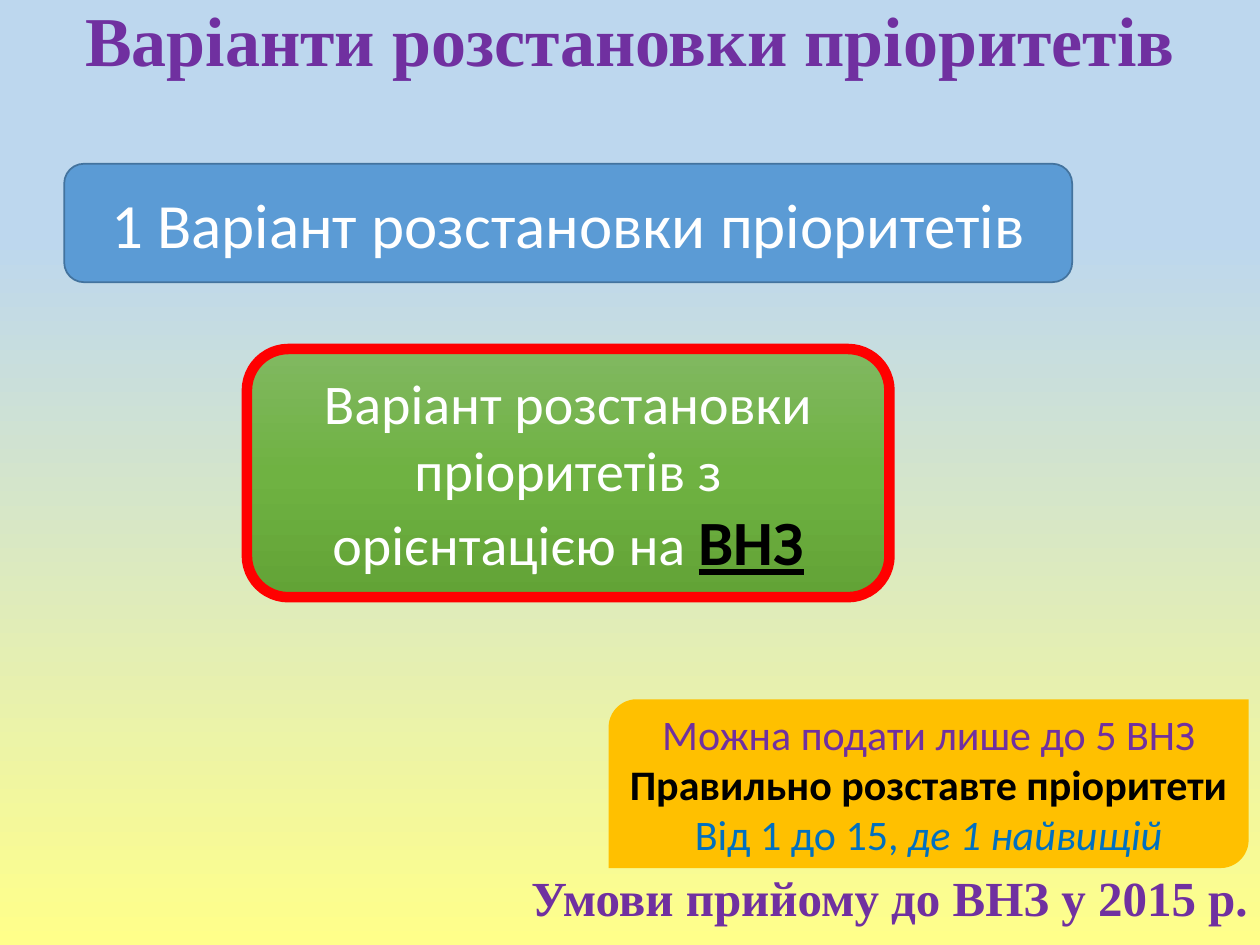
"""Build the slide about ways of setting admission priorities."""
from copy import deepcopy
from dataclasses import dataclass

from pptx import Presentation
from pptx.dml.color import RGBColor
from pptx.enum.shapes import MSO_SHAPE
from pptx.enum.text import MSO_ANCHOR, MSO_AUTO_SIZE, PP_ALIGN
from pptx.oxml.ns import qn
from pptx.util import Inches, Pt

CENTER, RIGHT = PP_ALIGN.CENTER, PP_ALIGN.RIGHT
MIDDLE = MSO_ANCHOR.MIDDLE
GROW = MSO_AUTO_SIZE.SHAPE_TO_FIT_TEXT
ROUNDED, DIAGONAL = MSO_SHAPE.ROUNDED_RECTANGLE, MSO_SHAPE.ROUND_2_DIAG_RECTANGLE


@dataclass(frozen=True)
class Theme:
    """Colours, fonts and type sizes."""
    purple: str = "7030A0"
    black: str = "000000"
    white: str = "FFFFFF"
    blue: str = "0070C0"
    red: str = "FF0000"
    amber: str = "FFC000"
    banner: str = "5B9BD5"
    banner_edge: str = "43739E"
    sky: tuple = ((0.25, "BDD7EE"), (1, "FFFF8A"))
    green: tuple = ((0, "81B861"), (0.5, "6FB242"), (1, "62A336"))
    body: str = "Calibri"
    heading: str = "Times New Roman"
    note: int = 24
    footer: int = 28
    option: int = 32
    large: int = 36
    title: int = 40


THEME = Theme()

CARDS = [
    dict(kind=DIAGONAL, at=(4.83, 5.55, 5.08, 1.34), fill=THEME.amber, line=None,
         size=THEME.note, grow=True, inset=0,
         paragraphs=[
             [("Можна подати лише до 5 ВНЗ", dict(color=THEME.purple))],
             [("Правильно розставте пріоритети", dict(color=THEME.black, bold=True))],
             [("Від 1 до 15, ", dict(color=THEME.blue)),
              ("де 1 найвищій", dict(color=THEME.blue, italic=True))]]),
    dict(kind=ROUNDED, at=(1.96, 2.77, 5.1, 1.97), fill=THEME.green,
         line=(THEME.red, 6), size=THEME.option, grow=True, inset=0.05,
         paragraphs=[
             [("Варіант розстановки пріоритетів з орієнтацією на ", dict(color=THEME.white)),
              ("ВНЗ", dict(color=THEME.black, bold=True, underline=True, size=THEME.large))]]),
    dict(kind=ROUNDED, at=(0.51, 1.3, 8, 0.94), fill=THEME.banner,
         line=(THEME.banner_edge, 1), size=THEME.large, grow=False, inset=0.05,
         paragraphs=[
             [("1 Варіант розстановки пріоритетів", dict(color=THEME.white))]]),
]

HEADINGS = [
    ("Умови прийому до ВНЗ у 2015 р.", (1, 6.79, 9, 0.71), RIGHT, THEME.footer),
    ("Варіанти розстановки пріоритетів", (0, -0.01, 10, 0.71), CENTER, THEME.title),
]


def paint_gradient(fill, element, stops):
    """Fill an element from top to bottom through the given stops."""
    fill.gradient()
    fill.gradient_angle = 270
    stop_list = element.find(".//" + qn("a:gsLst"))
    while len(stop_list) < len(stops):
        stop_list.append(deepcopy(stop_list[0]))
    for stop, (position, color) in zip(fill.gradient_stops, stops):
        stop.position = position
        stop.color.rgb = RGBColor.from_string(color)


def style_font(font, color, size=None, bold=None, italic=None, underline=None):
    """Apply colour and emphasis to a font."""
    font.color.rgb = RGBColor.from_string(color)
    font.bold, font.italic, font.underline = bold, italic, underline
    if size:
        font.size = Pt(size)


def add_card(page, card):
    """Add a filled shape with its paragraphs."""
    box = page.shapes.add_shape(card["kind"], *map(Inches, card["at"]))
    box.shadow.inherit = False
    if isinstance(card["fill"], tuple):
        paint_gradient(box.fill, box.element, card["fill"])
    else:
        box.fill.solid()
        box.fill.fore_color.rgb = RGBColor.from_string(card["fill"])
    if card["line"]:
        color, width = card["line"]
        box.line.color.rgb = RGBColor.from_string(color)
        box.line.width = Pt(width)
    else:
        box.line.fill.background()

    frame = box.text_frame
    frame.word_wrap = True
    frame.vertical_anchor = MIDDLE
    frame.margin_top = frame.margin_bottom = Inches(card["inset"])
    if card["grow"]:
        frame.auto_size = GROW
    for index, spans in enumerate(card["paragraphs"]):
        paragraph = frame.add_paragraph() if index else frame.paragraphs[0]
        paragraph.alignment = CENTER
        paragraph.font.name = THEME.body
        paragraph.font.size = Pt(card["size"])
        for text, style in spans:
            span = paragraph.add_run()
            span.text = text
            style_font(span.font, **style)


def add_heading(page, text, at, alignment, size):
    """Add a bold line of heading text."""
    frame = page.shapes.add_textbox(*map(Inches, at)).text_frame
    frame.word_wrap = True
    frame.vertical_anchor = MIDDLE
    paragraph = frame.paragraphs[0]
    paragraph.text = text
    paragraph.alignment = alignment
    paragraph.line_spacing = 0.9
    paragraph.font.name = THEME.heading
    style_font(paragraph.font, THEME.purple, size, bold=True)


def main():
    """Assemble and save the deck."""
    deck = Presentation()
    deck.slide_width, deck.slide_height = Inches(10), Inches(7.5)
    page = deck.slides.add_slide(deck.slide_layouts[6])
    paint_gradient(page.background.fill, page.element, THEME.sky)
    for card in CARDS:
        add_card(page, card)
    for heading in HEADINGS:
        add_heading(page, *heading)
    deck.save("out.pptx")


if __name__ == "__main__":
    main()
